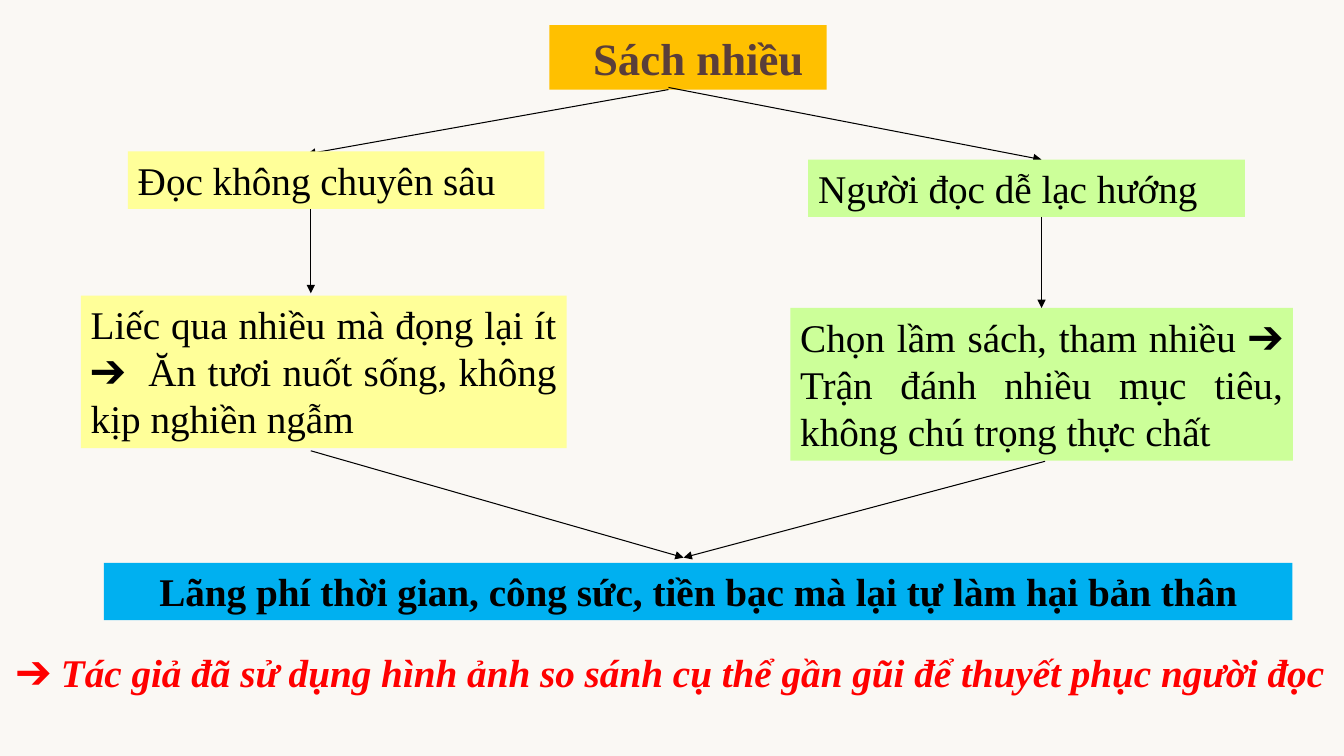
"""Build the flow slide on the harm of having too many books."""
from lxml import etree
from pptx import Presentation
from pptx.dml.color import RGBColor
from pptx.enum.shapes import MSO_CONNECTOR, MSO_SHAPE
from pptx.enum.text import MSO_ANCHOR, MSO_AUTO_SIZE, PP_ALIGN
from pptx.oxml.ns import qn
from pptx.util import Pt

STRAIGHT = MSO_CONNECTOR.STRAIGHT
RECTANGLE = MSO_SHAPE.RECTANGLE
TOP = MSO_ANCHOR.TOP
NO_AUTOSIZE = MSO_AUTO_SIZE.NONE
LEFT, CENTER, JUSTIFY = PP_ALIGN.LEFT, PP_ALIGN.CENTER, PP_ALIGN.JUSTIFY

PAPER = RGBColor(0xFA, 0xF8, 0xF4)
AMBER = RGBColor(0xFF, 0xC0, 0x00)
YELLOW = RGBColor(0xFF, 0xFF, 0x99)
GREEN = RGBColor(0xCC, 0xFF, 0x99)
BLUE = RGBColor(0x00, 0xB0, 0xF0)
BROWN = RGBColor(0x5A, 0x3E, 0x3A)
RED = RGBColor(0xFF, 0x00, 0x00)
BLACK = RGBColor(0x00, 0x00, 0x00)

TITLE_ONLY = 5
TOP_SIDE = 0


class FlowSlide:
    """Hold the style and the current slide."""

    font_name = "Times New Roman"
    body_size = 28
    title_size = 32
    line_width = 0.75

    def __init__(self, deck):
        """Add a title-only slide with a paper background."""
        self.page = deck.slides.add_slide(deck.slide_layouts[TITLE_ONLY])
        fill = self.page.background.fill
        fill.solid()
        fill.fore_color.rgb = PAPER

    def set_text(self, shape, text, size, color=BLACK, align=LEFT, bold=False, italic=False):
        """Put one formatted paragraph in a shape."""
        frame = shape.text_frame
        frame.text = text
        frame.word_wrap = True
        frame.auto_size = NO_AUTOSIZE
        frame.vertical_anchor = TOP
        para = frame.paragraphs[0]
        para.alignment = align
        para.space_before = Pt(0)
        font = para.runs[0].font
        font.name = self.font_name
        font.size = Pt(size)
        font.color.rgb = color
        font.bold = bold
        font.italic = italic

    def title(self, text, left, top, width, height, indent):
        """Move, fill and label the title placeholder."""
        shape = self.page.shapes.title
        shape.left, shape.top = Pt(left), Pt(top)
        shape.width, shape.height = Pt(width), Pt(height)
        shape.fill.solid()
        shape.fill.fore_color.rgb = AMBER
        self.set_text(shape, text, self.title_size, BROWN, bold=True)
        shape.text_frame.margin_left = Pt(indent)

    def box(self, text, left, top, width, height, fill, align=LEFT, bold=False):
        """Add a filled rectangle with text."""
        shape = self.page.shapes.add_shape(
            RECTANGLE, Pt(left), Pt(top), Pt(width), Pt(height))
        shape.shadow.inherit = False
        shape.fill.solid()
        shape.fill.fore_color.rgb = fill
        shape.line.fill.background()
        self.set_text(shape, text, self.body_size, align=align, bold=bold)
        return shape

    def note(self, text, left, top, width, height):
        """Add a red bold italic text box."""
        shape = self.page.shapes.add_textbox(Pt(left), Pt(top), Pt(width), Pt(height))
        self.set_text(shape, text, self.body_size, RED, bold=True, italic=True)

    def arrow(self, start, end, target=None):
        """Add a straight arrow, joined to the top of a target if given."""
        connector = self.page.shapes.add_connector(
            STRAIGHT, *(Pt(length) for length in (*start, *end)))
        if target is not None:
            connector.end_connect(target, TOP_SIDE)
        connector.line.color.rgb = BLACK
        connector.line.width = Pt(self.line_width)
        properties = connector.element.spPr
        etree.SubElement(properties.find(qn("a:ln")), qn("a:tailEnd"), type="triangle")
        etree.SubElement(properties, qn("a:effectLst"))


def main():
    """Build and save the deck."""
    deck = Presentation()
    deck.slide_width, deck.slide_height = Pt(960), Pt(540)
    flow = FlowSlide(deck)

    flow.title("Sách nhiều", 392.4, 18, 198, 46, indent=31.2)
    flow.arrow((477.5, 64), (219.5, 110))
    flow.arrow((477.5, 62.5), (744, 114))

    flow.box("Đọc không chuyên sâu", 91.3, 108.2, 297.5, 41, YELLOW)
    flow.box("Người đọc dễ lạc hướng", 577.3, 114, 312, 41, GREEN)
    flow.box("Liếc qua nhiều mà đọng lại ít ➔  Ăn tươi nuốt sống, không kịp nghiền ngẫm",
             57.7, 211.2, 347, 109, YELLOW, JUSTIFY)
    wrong_choice = flow.box(
        "Chọn lầm sách, tham nhiều ➔ Trận đánh nhiều mục tiêu, không chú trọng thực chất",
        564.5, 220, 359, 109, GREEN, JUSTIFY)
    flow.arrow((222, 149.2), (222, 209.5))
    flow.arrow((744, 155), (744, 220), wrong_choice)

    meeting_point = (488.3, 398.3)
    flow.arrow((222, 322), meeting_point)
    flow.arrow((746.5, 329.5), meeting_point)
    flow.box("Lãng phí thời gian, công sức, tiền bạc mà lại tự làm hại bản thân",
             74.2, 402, 849, 41, BLUE, CENTER, bold=True)
    flow.note("➔ Tác giả đã sử dụng hình ảnh so sánh cụ thể gần gũi để thuyết phục người đọc",
              4.5, 459.5, 955.5, 41)

    deck.save("out.pptx")


if __name__ == "__main__":
    main()
